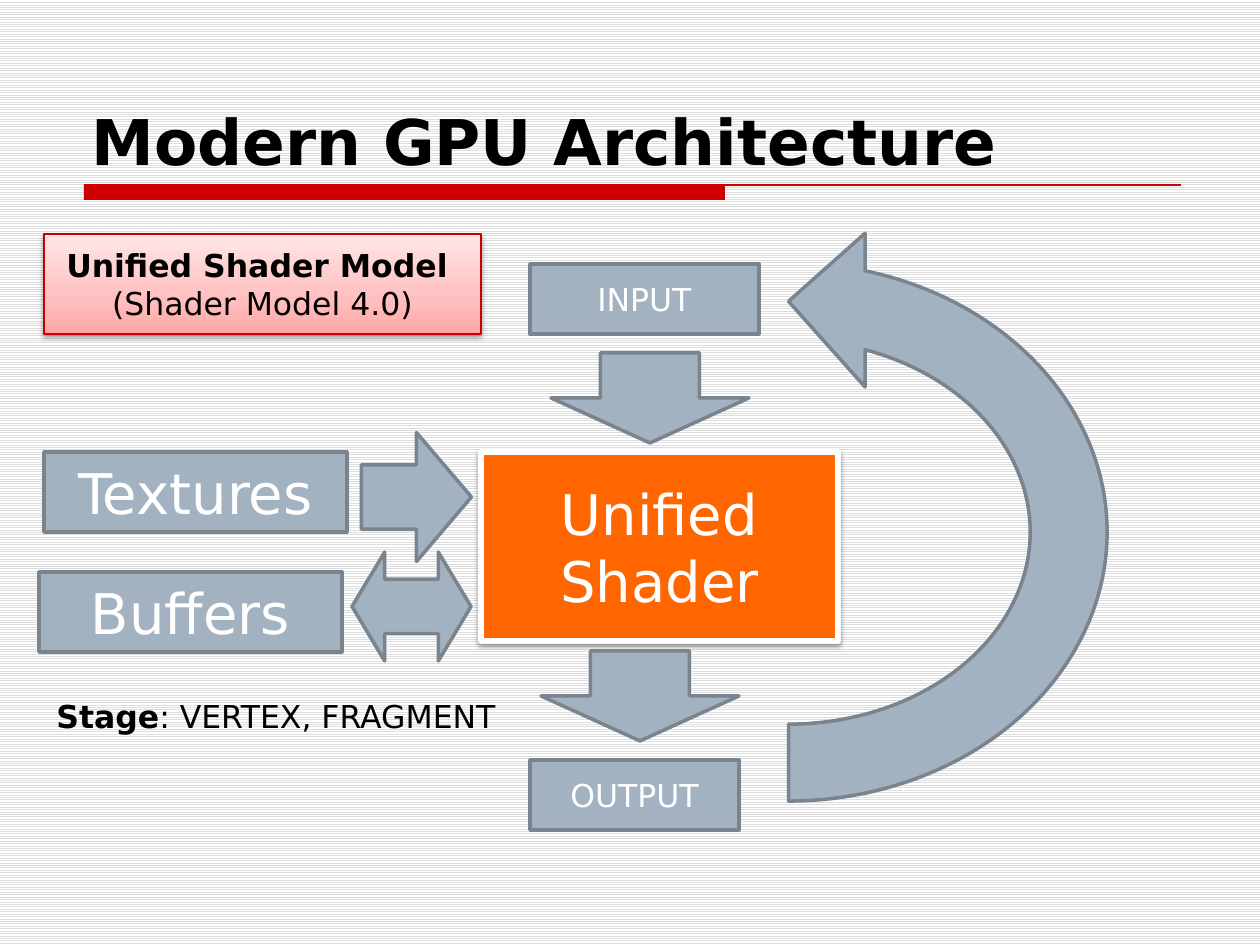
from dataclasses import dataclass

from lxml import etree
from pptx import Presentation
from pptx.dml.color import RGBColor
from pptx.enum.dml import MSO_PATTERN
from pptx.enum.shapes import MSO_CONNECTOR, MSO_SHAPE
from pptx.enum.text import MSO_ANCHOR, MSO_AUTO_SIZE, PP_ALIGN
from pptx.oxml.ns import qn
from pptx.util import Pt

EMU_PER_PX = 914400 / 126
RECT = MSO_SHAPE.RECTANGLE
DOWN = MSO_SHAPE.DOWN_ARROW
BOTH_WAYS = MSO_SHAPE.LEFT_RIGHT_ARROW
LOOP = MSO_SHAPE.CIRCULAR_ARROW
CENTER, LEFT = PP_ALIGN.CENTER, PP_ALIGN.LEFT


@dataclass(frozen=True)
class Theme:
    font: str = "DejaVu Sans"
    title_size: int = 36
    large: int = 32
    small: int = 18
    ink: str = "000000"
    paper: str = "FFFFFF"
    stripe: str = "DDDDDD"
    rule: str = "CC0000"
    block: str = "A3B2C1"
    block_edge: str = "79848F"
    shader: str = "FF6600"
    model_edge: str = "C80000"
    model_stops: tuple = ((0, "FFA5A5"), (35, "FFBFBF"), (100, "FFE7E7"))


THEME = Theme()


@dataclass(frozen=True)
class Block:
    """A filled diagram element, measured in px."""
    left: int
    top: int
    width: int
    height: int
    kind: int = RECT
    text: str = ""
    size: int = THEME.small
    fill: str = THEME.block
    edge: str = THEME.block_edge
    edge_width: float = 2
    rotation: int = 0
    flipped: bool = False
    raised: bool = False
    adjustments: tuple = ()


BLOCKS = (
    Block(481, 452, 357, 189, text="Unified Shader", size=THEME.large,
          fill=THEME.shader, edge=THEME.paper, edge_width=3, raised=True),
    Block(530, 264, 229, 70, text="INPUT"),
    Block(530, 760, 209, 70, text="OUTPUT"),
    Block(551, 353, 198, 90, DOWN),
    Block(541, 651, 198, 90, DOWN),
    Block(352, 442, 129, 110, DOWN, rotation=270),
    Block(44, 452, 303, 80, text="Textures", size=THEME.large),
    Block(39, 572, 303, 80, text="Buffers", size=THEME.large),
    # Short heads leave a notch for the tip of the arrow above
    Block(352, 552, 119, 109, BOTH_WAYS, adjustments=(0.5, 0.3)),
    Block(481, 175, 615, 714, LOOP, rotation=270, flipped=True),
)
MODEL = Block(44, 234, 437, 100, edge=THEME.model_edge, edge_width=0.75, raised=True)
TITLE_BAR = Block(84, 185, 641, 15, fill=THEME.rule, edge=THEME.rule)


def px(length: int) -> int:
    return round(length * EMU_PER_PX)


def rgb(code: str) -> RGBColor:
    return RGBColor.from_string(code)


def style_text(box, size: int, color: str, align, bold: tuple = (False,)) -> None:
    """Format the runs of the first paragraph, one bold flag per run."""
    para = box.text_frame.paragraphs[0]
    para.alignment = align
    for span, is_bold in zip(para.runs, bold):
        span.font.name = THEME.font
        span.font.size = Pt(size)
        span.font.bold = is_bold
        span.font.color.rgb = rgb(color)


def add_color(parent, code: str):
    return etree.SubElement(parent, qn("a:srgbClr"), val=code)


def add_shadow(box) -> None:
    effects = box.element.spPr.find(qn("a:effectLst"))
    shadow = etree.SubElement(effects, qn("a:outerShdw"), blurRad=str(Pt(3.1)),
                              dist=str(Pt(1.6)), dir="5400000", rotWithShape="0")
    etree.SubElement(add_color(shadow, THEME.ink), qn("a:alpha"), val="38000")


def add_block(page, block: Block):
    box = page.shapes.add_shape(block.kind, px(block.left), px(block.top),
                                px(block.width), px(block.height))
    box.shadow.inherit = False
    box.fill.solid()
    box.fill.fore_color.rgb = rgb(block.fill)
    box.line.color.rgb = rgb(block.edge)
    box.line.width = Pt(block.edge_width)
    box.rotation = block.rotation
    for index, value in enumerate(block.adjustments):
        box.adjustments[index] = value
    if block.flipped:
        box.element.spPr.xfrm.set("flipV", "1")
    if block.raised:
        add_shadow(box)
    if block.text:
        box.text_frame.text = block.text
        box.text_frame.vertical_anchor = MSO_ANCHOR.MIDDLE
        style_text(box, block.size, THEME.paper, CENTER)
    return box


def add_title(page) -> None:
    # Thick bar with a hairline running on to the right
    add_block(page, TITLE_BAR).line.fill.background()
    hairline = page.shapes.add_connector(MSO_CONNECTOR.STRAIGHT,
                                         px(84), px(185), px(1181), px(185))
    hairline.line.color.rgb = rgb(THEME.rule)
    hairline.line.width = Pt(0.75)
    etree.SubElement(hairline.element.spPr, qn("a:effectLst"))

    title = page.shapes.title
    title.left, title.top, title.width, title.height = map(px, (79, 16, 1166, 168))
    title.text_frame.text = "Modern GPU Architecture"
    title.text_frame.vertical_anchor = MSO_ANCHOR.BOTTOM
    title.text_frame.auto_size = MSO_AUTO_SIZE.NONE
    style_text(title, THEME.title_size, THEME.ink, LEFT, (True,))


def add_model_box(page) -> None:
    box = add_block(page, MODEL)
    box.fill.gradient()
    box.fill.gradient_angle = 90
    stops = box.element.spPr.find(".//" + qn("a:gsLst"))
    stops.clear()
    for position, color in THEME.model_stops:
        add_color(etree.SubElement(stops, qn("a:gs"), pos=str(position * 1000)), color)
    box.text_frame.text = "Unified Shader Model \v(Shader Model 4.0)"
    box.text_frame.vertical_anchor = MSO_ANCHOR.MIDDLE
    style_text(box, THEME.small, THEME.ink, CENTER, (True, False))


def add_stage_note(page) -> None:
    box = page.shapes.add_textbox(px(44), px(691), px(478), px(50))
    box.text_frame.word_wrap = False
    box.text_frame.auto_size = MSO_AUTO_SIZE.SHAPE_TO_FIT_TEXT
    box.text_frame.text = "Stage"
    box.text_frame.paragraphs[0].add_run().text = ": VERTEX, FRAGMENT"
    style_text(box, THEME.small, THEME.ink, LEFT, (True, False))


def main() -> None:
    deck = Presentation()
    deck.slide_width, deck.slide_height = px(1260), px(945)
    page = deck.slides.add_slide(deck.slide_layouts[5])

    # Striped background
    backdrop = page.background.fill
    backdrop.patterned()
    backdrop.pattern = MSO_PATTERN.LIGHT_HORIZONTAL
    backdrop.fore_color.rgb = rgb(THEME.stripe)
    backdrop.back_color.rgb = rgb(THEME.paper)

    # Title, then the pipeline diagram and its captions
    add_title(page)
    for block in BLOCKS:
        add_block(page, block)
    add_model_box(page)
    add_stage_note(page)
    deck.save("out.pptx")


if __name__ == "__main__":
    main()
